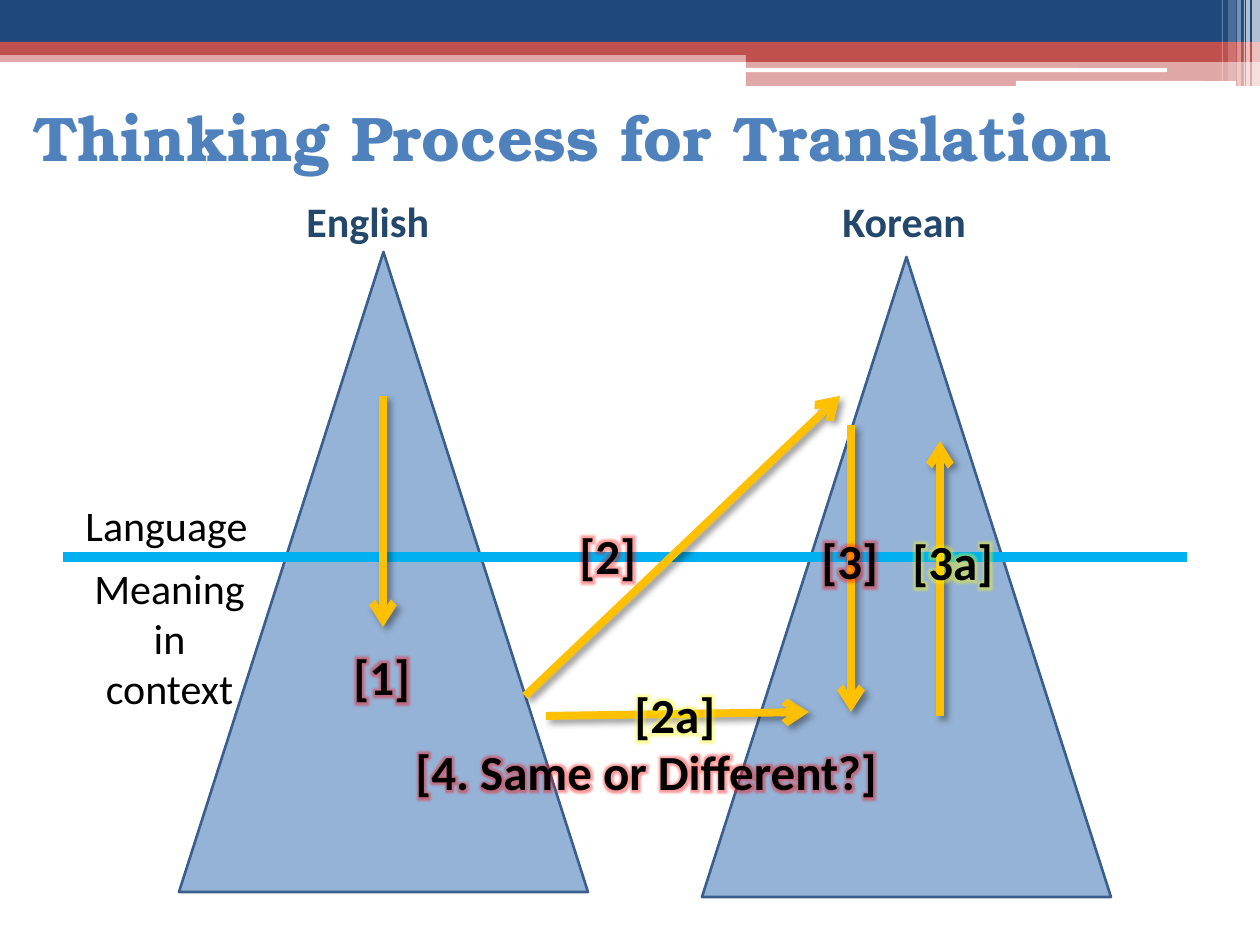
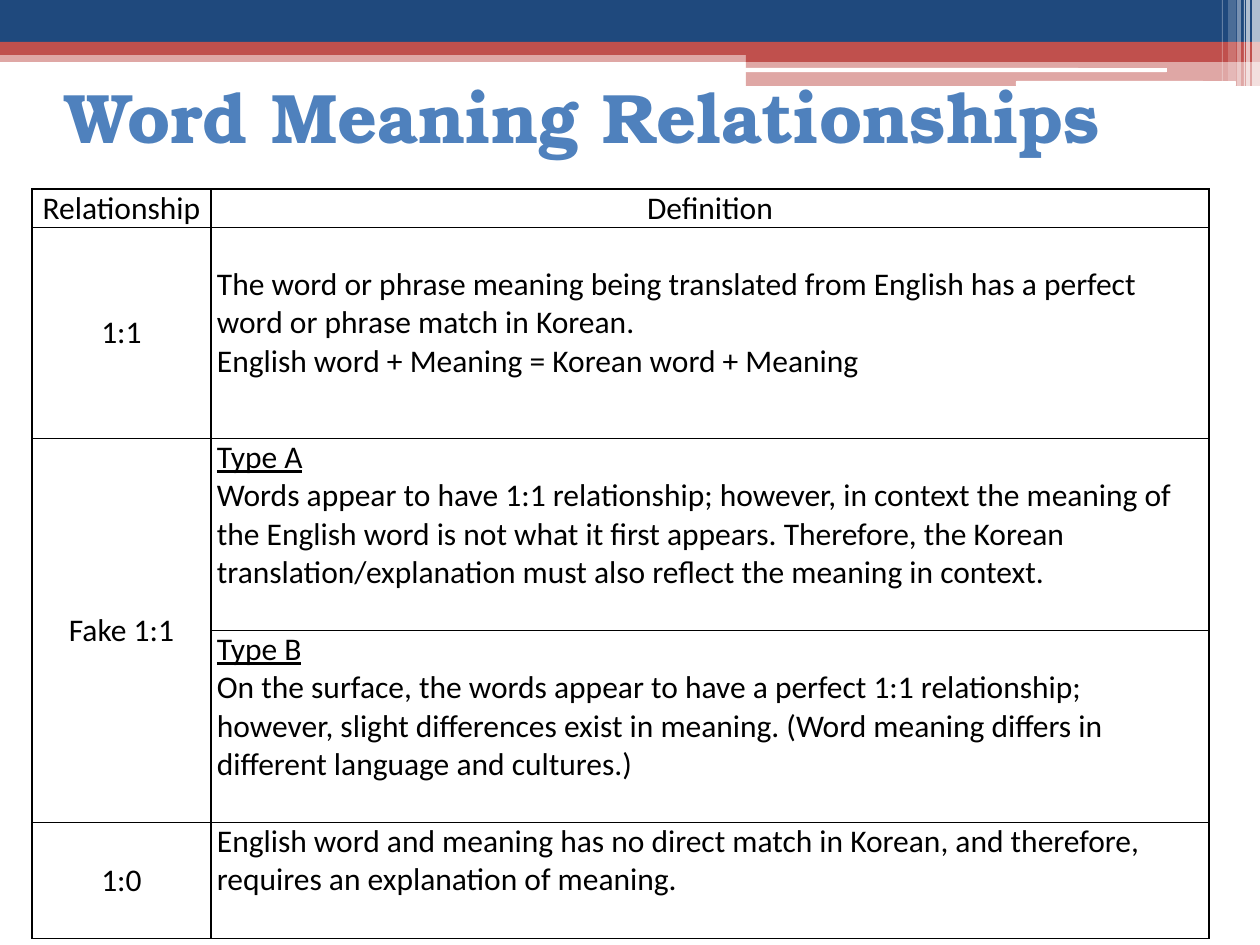
"""Build two slides on translating between English and Korean."""
from dataclasses import dataclass

import pptx
import pptx.dml.color
import pptx.enum.shapes
import pptx.enum.text
import pptx.oxml
import pptx.oxml.ns
import pptx.util

SCALE = 914400 / 126
SHAPE = pptx.enum.shapes.MSO_SHAPE
ALIGN = pptx.enum.text.PP_ALIGN
ANCHOR = pptx.enum.text.MSO_ANCHOR


@dataclass(frozen=True)
class Theme:
    """Colours, fonts and type sizes."""
    navy: str = "1F497D"
    red: str = "C0504D"
    white: str = "FFFFFF"
    black: str = "000000"
    title: str = "4F81BD"
    heading: str = "24486C"
    triangle: str = "95B3D7"
    outline: str = "3A5F8C"
    divider: str = "00B0F0"
    arrow: str = "FFC000"
    main_glow: str = "FF0000"
    side_glow: str = "FFFF00"
    title_font: str = "TeX Gyre Bonum"
    body_font: str = "Calibri"
    label_size: int = 24
    step_size: int = 28
    table_size: int = 18


THEME = Theme()

BANDS = [
    (SHAPE.RECTANGLE, (0, 50, 1260, 12), THEME.red, 50),
    (SHAPE.RECTANGLE, (0, 0, 1260, 43), THEME.navy, 100),
    (SHAPE.RECTANGLE, (0, 42, 1260, 13), THEME.red, 100),
    (SHAPE.RECTANGLE, (746, 49, 514, 13), THEME.red, 100),
    (SHAPE.RECTANGLE, (746, 61, 514, 25), THEME.red, 50),
    (SHAPE.ROUNDED_RECTANGLE, (745, 68, 422, 4), THEME.white, 100),
    (SHAPE.ROUNDED_RECTANGLE, (1016, 81, 220, 5), THEME.white, 100),
]
STRIPES = [(1252, 8, 86, 65), (1246, 4, 86, 65), (1244, 1, 86, 60),
           (1237, 4, 86, 40), (1228, 8, 81, 20), (1222, 1, 81, 30)]

PROCESS_TITLE = ("Thinking Process for Translation", 36, (21, 63, 1134, 147))
TRIANGLES = [(179, 252, 409, 640), (702, 257, 409, 640)]
DIVIDER = (63, 557, 1187, 557)
HEADINGS = [("English", (294, 189, 174, 63)), ("Korean", (830, 189, 166, 63))]
LEVELS = [("Language", (73, 493, 193, 63), False),
          ("Meaning in context", (73, 556, 193, 165), True)]
ARROWS = [(383, 396, 383, 627), (525, 696, 840, 396), (851, 425, 851, 712),
          (546, 716, 809, 712), (940, 716, 940, 441)]
STEPS = [
    ("[1]", (341, 640, 83, 72), THEME.main_glow),
    ("[2]", (567, 519, 83, 72), THEME.main_glow),
    ("[4. Same or Different?]", (403, 735, 537, 72), THEME.main_glow),
    ("[2a]", (622, 678, 108, 72), THEME.side_glow),
    ("[3]", (809, 524, 83, 72), THEME.main_glow),
    ("[3a]", (900, 525, 108, 72), THEME.side_glow),
]

TABLE_TITLE = ("Word Meaning Relationships", 40, (53, 42, 1134, 147))
TABLE_ORIGIN = (32, 189)
COLUMN_WIDTHS = (179, 998)
ROW_HEIGHTS = (38, 211, 192, 192, 116)
SIDE_MARGIN = 6
ONE_LINE = 38
UNDERLINED = ("Type A", "Type B")
ROWS = [
    ("Relationship", ["Definition"]),
    ("1:1", ["The word or phrase meaning being translated from English has a perfect",
             "word or phrase match in Korean.",
             "English word + Meaning = Korean word + Meaning"]),
    ("Fake 1:1", ["Type A",
                  "Words appear to have 1:1 relationship; however, in context the meaning of",
                  "the English word is not what it first appears. Therefore, the Korean",
                  "translation/explanation must also reflect the meaning in context."]),
    (None, ["Type B",
            "On the surface, the words appear to have a perfect 1:1 relationship;",
            "however, slight differences exist in meaning. (Word meaning differs in",
            "different language and cultures.)"]),
    ("1:0", ["English word and meaning has no direct match in Korean, and therefore,",
             "requires an explanation of meaning."]),
]


def px(*lengths):
    """Turn pixel lengths into EMU."""
    return [pptx.util.Emu(round(length * SCALE)) for length in lengths]


def rgb(colour):
    """Return a colour object for a hex string."""
    return pptx.dml.color.RGBColor.from_string(colour)


def xml(markup):
    """Parse a DrawingML element whose root tag is prefixed a:."""
    tag_end = min(markup.index(end) for end in " >/" if end in markup)
    return pptx.oxml.parse_xml(
        markup[:tag_end] + " " + pptx.oxml.ns.nsdecls("a") + markup[tag_end:])


def style(paragraph, size, colour=THEME.black, font=THEME.body_font, bold=False,
          align=ALIGN.LEFT):
    """Format a whole paragraph."""
    paragraph.alignment = align
    paragraph.font.name = font
    paragraph.font.size = pptx.util.Pt(size)
    paragraph.font.bold = bold
    paragraph.font.color.rgb = rgb(colour)


def add_filled(page, kind, place, colour, opacity=100):
    """Add a borderless shape with an optional transparent fill."""
    shape = page.shapes.add_shape(kind, *px(*place))
    shape.shadow.inherit = False
    shape.fill.solid()
    shape.fill.fore_color.rgb = rgb(colour)
    if opacity < 100:
        fill = shape.element.spPr.find(".//" + pptx.oxml.ns.qn("a:srgbClr"))
        fill.append(xml(f'<a:alpha val="{opacity * 1000}"/>'))
    shape.line.fill.background()
    return shape


def decorate_master(deck, page):
    """Draw the header bands and move them onto the slide master."""
    stripes = [(SHAPE.RECTANGLE, (left, 0, width, height), THEME.white, opacity)
               for left, width, height, opacity in STRIPES]
    tree = deck.slide_master.element.cSld.spTree
    for index, band in enumerate(BANDS + stripes):
        element = add_filled(page, *band).element
        element.nvSpPr.cNvPr.set("id", str(100 + index))
        tree.insert(2 + index, element)


def add_title(page, text, size, place):
    """Place and format the title placeholder."""
    title = page.shapes.title
    title.left, title.top, title.width, title.height = px(*place)
    frame = title.text_frame
    frame.text = text
    frame.auto_size = pptx.enum.text.MSO_AUTO_SIZE.NONE
    frame.vertical_anchor = ANCHOR.MIDDLE
    style(frame.paragraphs[0], size, THEME.title, THEME.title_font, True)


def add_label(page, text, place, size, wrap=False, **look):
    """Add a text box and return its paragraph."""
    frame = page.shapes.add_textbox(*px(*place)).text_frame
    frame.word_wrap = wrap
    frame.auto_size = pptx.enum.text.MSO_AUTO_SIZE.SHAPE_TO_FIT_TEXT
    frame.text = text
    style(frame.paragraphs[0], size, **look)
    return frame.paragraphs[0]


def add_line(page, ends, colour, width, effects=""):
    """Add a straight line with the given effects."""
    line = page.shapes.add_connector(
        pptx.enum.shapes.MSO_CONNECTOR.STRAIGHT, *px(*ends))
    line.line.width = pptx.util.Pt(width)
    line.line.color.rgb = rgb(colour)
    line.element.spPr.append(xml(f"<a:effectLst>{effects}</a:effectLst>"))
    return line


def add_arrow(page, ends):
    """Add a shadowed arrow."""
    shadow = ('<a:outerShdw blurRad="50800" dist="38100" dir="2700000" algn="tl" '
              f'rotWithShape="0"><a:srgbClr val="{THEME.black}">'
              '<a:alpha val="40000"/></a:srgbClr></a:outerShdw>')
    arrow = add_line(page, ends, THEME.arrow, 4.5, shadow)
    outline = arrow.element.spPr.find(pptx.oxml.ns.qn("a:ln"))
    outline.append(xml('<a:tailEnd type="arrow"/>'))


def add_step(page, text, place, glow):
    """Add a bold step label with a glow."""
    para = add_label(page, text, place, THEME.step_size, bold=True)
    span = para.runs[0]
    span._r.get_or_add_rPr().append(xml(
        f'<a:effectLst><a:glow rad="101600"><a:srgbClr val="{glow}">'
        '<a:alpha val="40000"/></a:srgbClr></a:glow></a:effectLst>'))


def build_process(page):
    """Fill the slide on the thinking process."""
    add_title(page, *PROCESS_TITLE)
    for place in TRIANGLES:
        triangle = add_filled(page, SHAPE.ISOSCELES_TRIANGLE, place, THEME.triangle)
        triangle.line.color.rgb = rgb(THEME.outline)
        triangle.line.width = pptx.util.Pt(1.5)
    add_line(page, DIVIDER, THEME.divider, 6)
    for text, place, wrap in LEVELS:
        add_label(page, text, place, THEME.label_size, wrap,
                  align=ALIGN.CENTER if wrap else ALIGN.LEFT)
    for text, place in HEADINGS:
        add_label(page, text, place, THEME.label_size, colour=THEME.heading, bold=True)
    for ends in ARROWS:
        add_arrow(page, ends)
    for step in STEPS:
        add_step(page, *step)


def fill_cell(cell, lines, align, anchor):
    """Write lines into a cell and give it borders."""
    cell.margin_left, cell.margin_right = px(SIDE_MARGIN, SIDE_MARGIN)
    cell.margin_top = cell.margin_bottom = 0
    cell.vertical_anchor = anchor
    cell.fill.background()
    for index, side in enumerate("LRTB"):
        cell._tc.get_or_add_tcPr().insert(index, xml(
            f'<a:ln{side} w="12700"><a:solidFill><a:srgbClr val="{THEME.black}"/>'
            f'</a:solidFill></a:ln{side}>'))
    cell.text_frame.text = "\n".join(lines)
    for para in cell.text_frame.paragraphs:
        style(para, THEME.table_size, align=align)
        if para.text in UNDERLINED:
            para.runs[0].font.underline = True


def build_relationships(page):
    """Fill the slide with the table of relationships."""
    add_title(page, *TABLE_TITLE)
    size = (sum(COLUMN_WIDTHS), sum(ROW_HEIGHTS))
    table = page.shapes.add_table(
        len(ROWS), len(COLUMN_WIDTHS), *px(*TABLE_ORIGIN, *size)).table
    table.first_row = table.horz_banding = False
    for column, width in zip(table.columns, px(*COLUMN_WIDTHS)):
        column.width = width
    for row, height in zip(table.rows, px(*ROW_HEIGHTS)):
        row.height = height
    for index, (name, lines) in enumerate(ROWS):
        header = index == 0
        fill_cell(table.cell(index, 0), [name or ""], ALIGN.CENTER,
                  ANCHOR.TOP if header else ANCHOR.MIDDLE)
        fill_cell(table.cell(index, 1), lines,
                  ALIGN.CENTER if header else ALIGN.JUSTIFY, ANCHOR.TOP)
        if name is None:
            table.cell(index - 1, 0).merge(table.cell(index, 0))
    table.cell(1, 1).margin_top = px(ONE_LINE)[0]


def main():
    """Build and save the deck."""
    deck = pptx.Presentation()
    deck.slide_width, deck.slide_height = px(1260, 945)
    title_only = deck.slide_layouts[5]
    pages = [deck.slides.add_slide(title_only) for _ in range(2)]
    decorate_master(deck, pages[0])
    build_process(pages[0])
    build_relationships(pages[1])
    deck.save("out.pptx")


if __name__ == "__main__":
    main()
